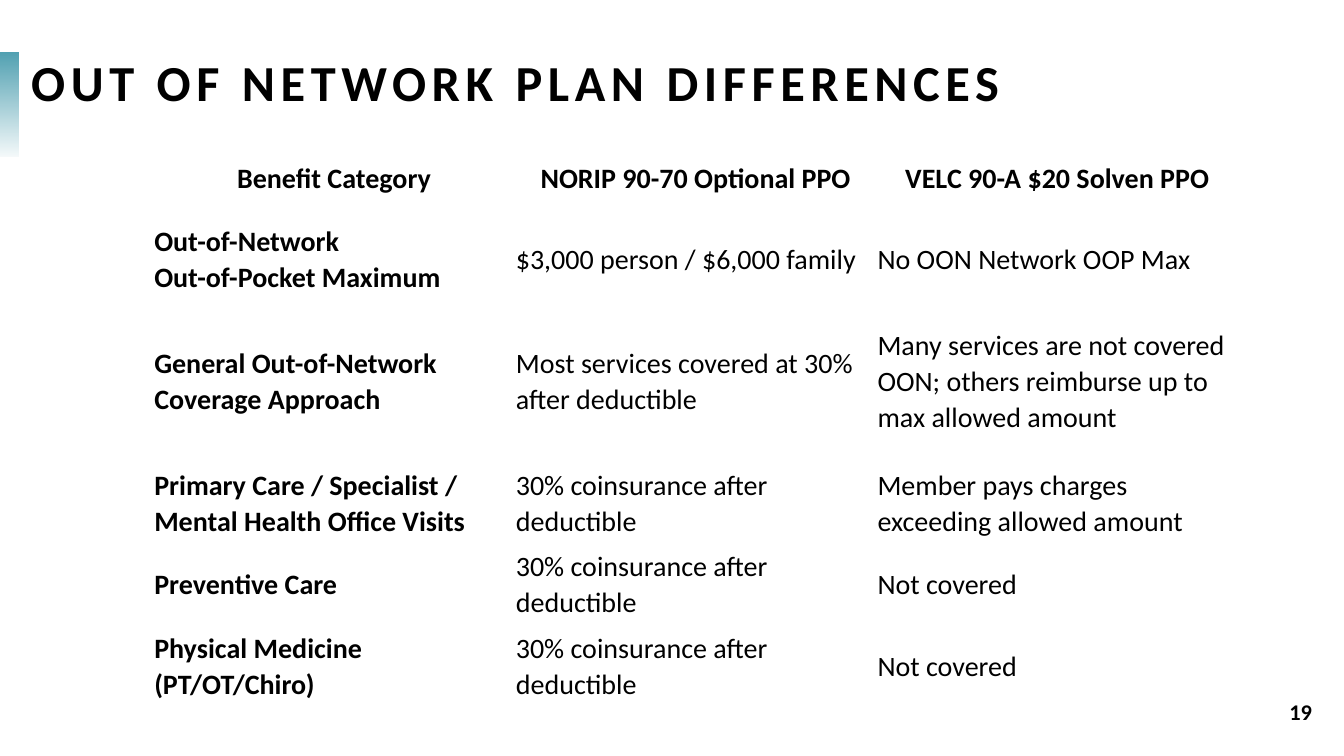
from lxml.etree import SubElement
from pptx import Presentation
from pptx.dml.color import RGBColor
from pptx.enum.shapes import MSO_SHAPE
from pptx.enum.text import MSO_ANCHOR, PP_ALIGN
from pptx.oxml.ns import qn
from pptx.util import Inches, Pt

BLACK = RGBColor(0x00, 0x00, 0x00)
TEAL = RGBColor(0x51, 0xA1, 0xB2)
WHITE = RGBColor(0xFF, 0xFF, 0xFF)

deck = Presentation()
deck.slide_width = Inches(13.33)
deck.slide_height = Inches(7.5)
slide = deck.slides.add_slide(deck.slide_layouts[6])
slide.background.fill.solid()
slide.background.fill.fore_color.rgb = WHITE


def style(para, size, bold, align, gap):
    para.alignment = align
    para.line_spacing = gap
    para.font.name = "Calibri"
    para.font.size = Pt(size)
    para.font.bold = bold
    para.font.color.rgb = BLACK


def label(text, left, top, width, height, size, align, gap):
    box = slide.shapes.add_textbox(Inches(left), Inches(top), Inches(width), Inches(height))
    frame = box.text_frame
    frame.word_wrap = True
    frame.vertical_anchor = MSO_ANCHOR.MIDDLE
    frame.margin_left = frame.margin_right = 0
    frame.margin_top = frame.margin_bottom = 0
    para = frame.paragraphs[0]
    run = para.add_run()
    run.text = text
    style(para, size, True, align, gap)
    return run


accent = slide.shapes.add_shape(MSO_SHAPE.RECTANGLE, 0, Inches(0.52), Inches(0.18), Inches(1.03))
accent.shadow.inherit = False
accent.line.fill.background()
accent.fill.gradient()
accent.fill.gradient_angle = 90
stops = accent.fill.gradient_stops
for stop, place in zip(stops, (0, 1)):
    stop.color.rgb = TEAL
    stop.position = place
faint = next(accent.element.iter(qn("a:srgbClr")))
SubElement(faint, qn("a:alpha")).set("val", "5000")

title = label("OUT OF NETWORK PLAN DIFFERENCES", 0.31, 0.33, 12.36, 1.03, 36, PP_ALIGN.LEFT, 0.9)
title.font.bold = True
title._r.get_or_add_rPr().set("spc", "400")
label("19", 12.47, 6.62, 0.86, 0.88, 16, PP_ALIGN.CENTER, 1.0)

ROWS = [
    ("Benefit Category", "NORIP 90-70 Optional PPO", "VELC 90-A $20 Solven PPO"),
    ("Out-of-Network\nOut-of-Pocket Maximum", "$3,000 person / $6,000 family", "No OON Network OOP Max"),
    (
        "General Out-of-Network Coverage Approach",
        "Most services covered at 30% after deductible",
        "Many services are not covered OON; others reimburse up to max allowed amount",
    ),
    (
        "Primary Care / Specialist / Mental Health Office Visits",
        "30% coinsurance after deductible",
        "Member pays charges exceeding allowed amount",
    ),
    ("Preventive Care", "30% coinsurance after deductible", "Not covered"),
    ("Physical Medicine (PT/OT/Chiro)", "30% coinsurance after deductible", "Not covered"),
]
UNIT = 5.65 / 7
SPANS = (1, 1, 2, 1, 1, 1)

table = slide.shapes.add_table(
    len(ROWS), 3, Inches(1.52), Inches(1.36), Inches(10.76), Inches(5.65)
).table
table.first_row = False
table.horz_banding = False
for row, span in zip(table.rows, SPANS):
    row.height = Inches(UNIT * span)

for r, texts in enumerate(ROWS):
    for c, text in enumerate(texts):
        cell = table.cell(r, c)
        cell.fill.background()
        cell.vertical_anchor = MSO_ANCHOR.MIDDLE
        cell.margin_left = cell.margin_right = Inches(0.01)
        cell.margin_top = cell.margin_bottom = Inches(0.01)
        cell.text = text
        align = PP_ALIGN.CENTER if r == 0 else PP_ALIGN.LEFT
        for para in cell.text_frame.paragraphs:
            style(para, 20, r == 0 or c == 0, align, 1.05)

deck.save("out.pptx")
